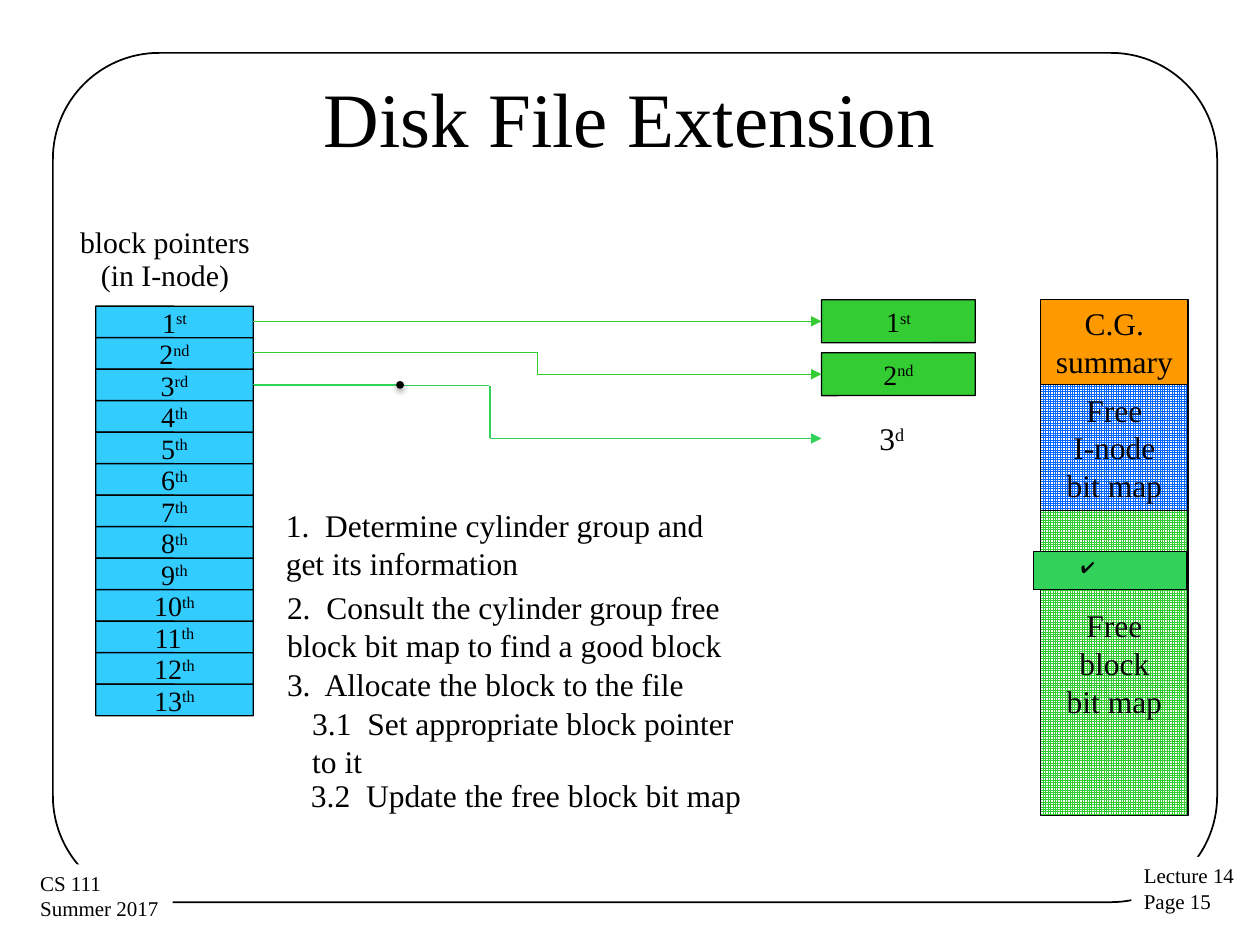
from dataclasses import dataclass
from typing import Optional

from lxml import etree
from pptx import Presentation
from pptx import util as u
from pptx.dml.color import RGBColor
from pptx.enum import dml, shapes, text
from pptx.oxml import parse_xml
from pptx.oxml.ns import nsdecls, qn

COLUMNS, ROWS = 100, 75
CELL = u.Inches(0.1)
SERIF = "Times New Roman"
BLACK, WHITE = "000000", "FFFFFF"
GREEN, SKY, NEW_GREEN = "33CC33", "33CCFF", "32D15A"
LEFT, CENTER = text.PP_ALIGN.LEFT, text.PP_ALIGN.CENTER
TOP, MIDDLE = text.MSO_ANCHOR.TOP, text.MSO_ANCHOR.MIDDLE
RECT, ROUNDED = shapes.MSO_SHAPE.RECTANGLE, shapes.MSO_SHAPE.ROUNDED_RECTANGLE


@dataclass
class Area:
    col: float
    row: float
    cols: float
    rows: float

    def emu(self) -> list[int]:
        return [grid(n) for n in (self.col, self.row, self.cols, self.rows)]


@dataclass
class Label:
    words: str
    size: float = 18
    suffix: str = ""
    align: int = CENTER
    anchor: int = MIDDLE
    wrap: bool = False
    font: str = SERIF
    spacing: float = 1.0


@dataclass
class Box:
    area: Area
    fill: Optional[str]
    label: Optional[Label] = None
    kind: int = RECT
    corner: float = 0
    outline: float = 0.75
    pattern: bool = False


@dataclass
class Link:
    start: tuple[float, float]
    end: tuple[float, float]
    color: str = NEW_GREEN
    arrow: bool = False
    kind: int = shapes.MSO_CONNECTOR.STRAIGHT


def grid(cells: float) -> int:
    return round(cells * CELL)


def color(value: str) -> RGBColor:
    return RGBColor.from_string(value)


def write(frame, label: Label) -> None:
    frame.text = label.words
    frame.word_wrap = label.wrap
    frame.vertical_anchor = label.anchor
    if label.suffix:
        raised = frame.paragraphs[-1].add_run()
        raised.text = label.suffix
        raised.font._element.set("baseline", "30000")
    for paragraph in frame.paragraphs:
        paragraph.alignment = label.align
        paragraph.line_spacing = label.spacing
        for run in paragraph.runs:
            run.font.name = label.font
            run.font.size = u.Pt(label.size)
            run.font.color.rgb = color(BLACK)


def draw_box(slide, box: Box):
    shape = slide.shapes.add_shape(box.kind, *box.area.emu())
    shape.shadow.inherit = False
    if box.kind == ROUNDED:
        shape.adjustments[0] = box.corner
    if box.pattern:
        shape.fill.patterned()
        shape.fill.pattern = dml.MSO_PATTERN.SMALL_GRID
        shape.fill.fore_color.rgb = color(box.fill)
        shape.fill.back_color.rgb = color(WHITE)
    elif box.fill:
        shape.fill.solid()
        shape.fill.fore_color.rgb = color(box.fill)
    else:
        shape.fill.background()
    if box.outline:
        shape.line.color.rgb = color(BLACK)
        shape.line.width = u.Pt(box.outline)
    else:
        shape.line.fill.background()
    if box.label:
        write(shape.text_frame, box.label)
    return shape


def draw_text(slide, area: Area, label: Label):
    frame = slide.shapes.add_textbox(*area.emu()).text_frame
    write(frame, label)
    return frame


def draw_link(slide, link: Link) -> None:
    ends = [grid(n) for n in (*link.start, *link.end)]
    connector = slide.shapes.add_connector(link.kind, *ends)
    connector.line.color.rgb = color(link.color)
    connector.line.width = u.Pt(0.75)
    if link.arrow:
        etree.SubElement(connector.line._get_or_add_ln(), qn("a:tailEnd"), type="triangle")
    etree.SubElement(connector._element.spPr, qn("a:effectLst"))


def ordinal(number: int) -> Label:
    suffix = {1: "st", 2: "nd", 3: "rd"}.get(number, "th")
    return Label(str(number), 16, suffix)


def draw_frame(slide) -> None:
    draw_box(slide, Box(Area(4.2, 4.2, 92.4, 67.4), None, None, ROUNDED, 0.125, 1))
    for area, words in (
        (Area(89.8, 68, 9.3, 5.1), "Lecture 14\nPage 15"),
        (Area(2.2, 68.6, 11.5, 5.1), "CS 111\nSummer 2017"),
    ):
        draw_box(slide, Box(area, WHITE, Label(words, 12, align=LEFT, anchor=TOP), outline=0))


def draw_blocks(slide) -> None:
    for number in (1, 2):
        area = Area(65.2, 23.8 + 4.2 * (number - 1), 12.2, 3.4)
        draw_box(slide, Box(area, GREEN, ordinal(number), ROUNDED, 0.005))
    for number in range(1, 14):
        area = Area(7.6, 24.3 + 2.5 * (number - 1), 12.5, 2.5)
        draw_box(slide, Box(area, SKY, ordinal(number), ROUNDED, 0.009))
    heading = Label("block pointers\n(in I-node)", 17, anchor=TOP, spacing=0.93)
    frame = draw_text(slide, Area(6.3, 18, 13.6, 5.3), heading)
    frame.margin_left = frame.margin_right = frame.margin_top = frame.margin_bottom = 0
    draw_text(slide, Area(68.8, 32.8, 4.1, 4), Label("3", suffix="d", align=LEFT, anchor=TOP))


def draw_cylinder_group(slide) -> None:
    top = 23.8
    for rows, fill, words, pattern in (
        (6.7, "FF9900", "C.G.\nsummary", False),
        (10, "0066FF", "Free\nI-node\nbit map", True),
        (24.2, GREEN, "Free\nblock\nbit map", True),
    ):
        draw_box(slide, Box(Area(82.6, top, 11.7, rows), fill, Label(words), pattern=pattern))
        top += rows
    draw_box(slide, Box(Area(82, 43.8, 12.2, 3), NEW_GREEN))
    check = Label("✔", 9, align=LEFT, anchor=TOP, wrap=True, font="Arial")
    draw_text(slide, Area(84.8, 43.8, 4.3, 2.5), check)


def draw_pointers(slide) -> None:
    for link in (
        Link((20.1, 25.5), (65.2, 25.5), GREEN, True),
        Link((20.1, 28), (65.2, 29.7), GREEN, True, shapes.MSO_CONNECTOR.ELBOW),
        Link((20.1, 30.5), (31.5, 30.5)),
        Link((20.2, 30.6), (38.8, 30.6)),
        Link((38.9, 30.6), (38.9, 34.8)),
        Link((38.9, 34.8), (65.2, 34.8), arrow=True),
    ):
        draw_link(slide, link)
    dot = draw_box(slide, Box(Area(31.5, 30.3, 0.5, 0.5), BLACK, kind=shapes.MSO_SHAPE.OVAL))
    dot._element.spPr.find(qn("a:effectLst")).append(parse_xml(
        f'<a:outerShdw {nsdecls("a")} blurRad="{u.Pt(3.1)}" dist="{u.Pt(1.8)}" dir="5400000">'
        f'<a:srgbClr val="{BLACK}"><a:alpha val="35000"/></a:srgbClr></a:outerShdw>'))


def draw_steps(slide) -> None:
    for col, row, rows, words in (
        (21.7, 39.7, 7.1, "1.  Determine cylinder group and get its information"),
        (21.8, 46.2, 7.1, "2.  Consult the cylinder group free block bit map to find a good block"),
        (21.8, 52.3, 4, "3.  Allocate the block to the file"),
        (23.8, 55.4, 7.1, "3.1  Set appropriate block pointer to it"),
        (23.7, 61.1, 4, "3.2  Update the free block bit map"),
    ):
        draw_text(slide, Area(col, row, 36.6, rows), Label(words, align=LEFT, anchor=TOP, wrap=True))


def main() -> None:
    deck = Presentation()
    deck.slide_width, deck.slide_height = grid(COLUMNS), grid(ROWS)
    slide = deck.slides.add_slide(deck.slide_layouts[5])
    title = slide.shapes.title
    title.left, title.top, title.width, title.height = Area(5, 3, 90, 12.5).emu()
    write(title.text_frame, Label("Disk File Extension", 44, wrap=True))
    for draw in (draw_frame, draw_blocks, draw_cylinder_group, draw_pointers, draw_steps):
        draw(slide)
    deck.save("out.pptx")


if __name__ == "__main__":
    main()
